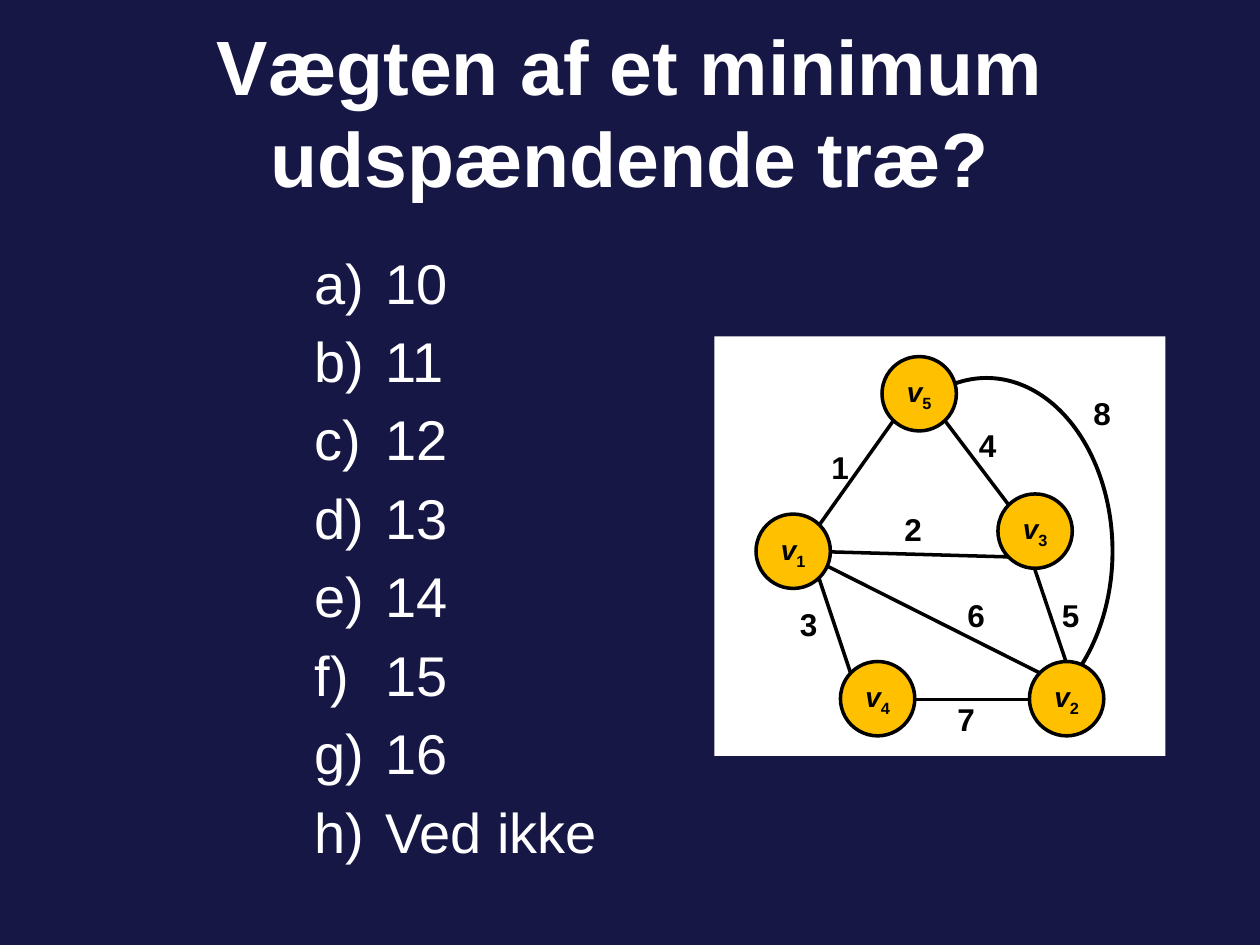
from lxml import etree
from pptx import Presentation
from pptx import util as u
from pptx.dml.color import RGBColor
from pptx.enum import shapes, text
from pptx.oxml.ns import qn

NAVY = RGBColor(0x17, 0x17, 0x45)
WHITE = RGBColor(0xFF, 0xFF, 0xFF)
BLACK = RGBColor(0, 0, 0)
AMBER = RGBColor(0xFF, 0xC0, 0x00)
NODE_SIZE = 0.59

ANSWERS = ["10", "11", "12", "13", "14", "15", "16", "Ved ikke"]
NODES = {"1": (6, 4.08), "2": (8.17, 5.25), "3": (7.92, 3.92),
         "4": (6.67, 5.25), "5": (7, 2.83)}
EDGES = [(8, 4, 7.5, 3.34), (6.5, 4.17, 7.09, 3.34),
         (6.5, 4.59, 6.75, 5.34), (7.26, 5.55, 8.17, 5.55),
         (6.59, 4.38, 8, 4.42), (8.46, 5.25, 8.21, 4.51),
         (6.42, 4.42, 8.25, 5.34)]
WEIGHTS = {"1": (6.5, 3.51), "2": (7.08, 4), "3": (6.25, 4.75),
           "4": (7.67, 3.33), "5": (8.33, 4.68), "6": (7.58, 4.68),
           "7": (7.5, 5.51), "8": (8.58, 3.08)}


class GraphSlide:
    font = "Arial"
    line_width = 2

    def __init__(self, prs):
        self.s = prs.slides.add_slide(prs.slide_layouts[5])
        fill = self.s.background.fill
        fill.solid()
        fill.fore_color.rgb = NAVY

    def run(self, p, content, size, color, **style):
        r = p.add_run()
        r.text = content
        r.font.color.rgb = color
        formats = {"name": self.font, "size": u.Pt(size), **style}
        for name, value in formats.items():
            setattr(r.font, name, value)
        return r

    def title(self, content, box):
        sp = self.s.shapes.title
        for name, value in zip(("left", "top", "width", "height"), box):
            setattr(sp, name, u.Inches(value))
        tf = sp.text_frame
        tf.word_wrap = True
        tf.auto_size = text.MSO_AUTO_SIZE.NONE
        tf.vertical_anchor = text.MSO_ANCHOR.MIDDLE
        p = tf.paragraphs[0]
        p.alignment = text.PP_ALIGN.CENTER
        self.run(p, content, 44, WHITE, bold=True)

    def textbox(self, box):
        sp = self.s.shapes.add_textbox(*map(u.Inches, box))
        sp.text_frame.word_wrap = True
        return sp.text_frame

    def lettered_list(self, items, box):
        tf = self.textbox(box)
        for i, item in enumerate(items):
            p = tf.add_paragraph() if i else tf.paragraphs[0]
            self.run(p, item, 32, WHITE)
            props = p._p.get_or_add_pPr()
            props.set("marL", str(u.Inches(0.56)))
            props.set("indent", str(u.Inches(-0.56)))
            before = etree.SubElement(props, qn("a:spcBef"))
            etree.SubElement(before, qn("a:spcPct"), val="20000")
            etree.SubElement(props, qn("a:buFont"), typeface=self.font)
            etree.SubElement(props, qn("a:buAutoNum"), type="alphaLcParenR")

    def shape(self, kind, box, fill=None, line=None):
        sp = self.s.shapes.add_shape(kind, *map(u.Inches, box))
        sp.shadow.inherit = False
        for part, color in ((sp.fill, fill), (sp.line.fill, line)):
            if color is None:
                part.background()
            else:
                part.solid()
                part.fore_color.rgb = color
        if line is not None:
            sp.line.width = u.Pt(self.line_width)
        return sp

    def panel(self, box):
        self.shape(shapes.MSO_SHAPE.RECTANGLE, box, fill=WHITE)

    def arc(self, box, start, end):
        sp = self.shape(shapes.MSO_SHAPE.ARC, box, line=BLACK)
        sp.line.width = u.Pt(2.25)
        sp.adjustments[0] = start
        sp.adjustments[1] = end

    def edge(self, ends):
        line = self.s.shapes.add_connector(
            shapes.MSO_CONNECTOR.STRAIGHT, *map(u.Inches, ends))
        line.line.color.rgb = BLACK
        line.line.width = u.Pt(self.line_width)
        etree.SubElement(line._element.spPr, qn("a:effectLst"))

    def node(self, index, x, y):
        sp = self.shape(shapes.MSO_SHAPE.OVAL, (x, y, NODE_SIZE, NODE_SIZE),
                        fill=AMBER, line=BLACK)
        tf = sp.text_frame
        formats = {"margin_left": 0, "margin_right": 0, "margin_top": 0,
                   "margin_bottom": 0, "word_wrap": False,
                   "vertical_anchor": text.MSO_ANCHOR.MIDDLE}
        for name, value in formats.items():
            setattr(tf, name, value)
        p = tf.paragraphs[0]
        p.alignment = text.PP_ALIGN.CENTER
        self.run(p, "v", 16, BLACK, bold=True, italic=True)
        r = self.run(p, index, 16, BLACK, bold=True)
        r._r.get_or_add_rPr().set("baseline", "-25000")

    def weight(self, value, x, y):
        tf = self.textbox((x, y, 0.33, 0.4))
        self.run(tf.paragraphs[0], value, 18, BLACK, bold=True)


def main():
    prs = Presentation()
    prs.slide_width, prs.slide_height = u.Inches(10), u.Inches(7.5)
    slide = GraphSlide(prs)
    slide.title("Vægten af et minimum udspændende træ?", (0, 0.17, 10, 1.42))
    slide.lettered_list(ANSWERS, (2.4, 1.92, 2.73, 4.08))
    slide.panel((5.67, 2.67, 3.58, 3.33))
    slide.arc((6.83, 3, 2, 2.75), 155.17, 40.17)
    for ends in EDGES:
        slide.edge(ends)
    for index, (x, y) in NODES.items():
        slide.node(index, x, y)
    for value, (x, y) in WEIGHTS.items():
        slide.weight(value, x, y)
    prs.save("out.pptx")


if __name__ == "__main__":
    main()
